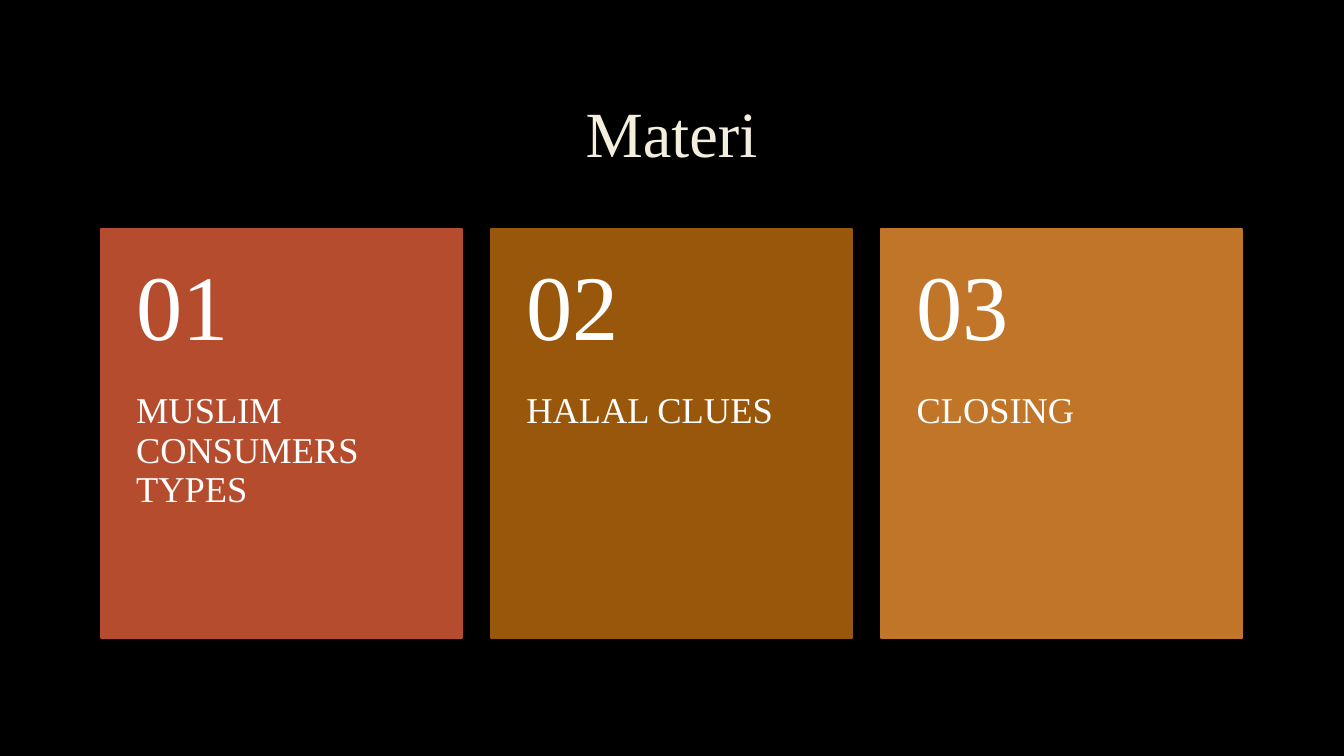
"""Build the agenda slide: a title above three numbered topic cards."""
from pptx import Presentation
from pptx.dml.color import RGBColor
from pptx.enum.shapes import MSO_SHAPE as Shape
from pptx.enum.text import MSO_ANCHOR as Anchor, PP_ALIGN as Align
from pptx.util import Inches, Pt

BLACK = RGBColor(0x00, 0x00, 0x00)
CREAM = RGBColor(0xF4, 0xEE, 0xDC)
WHITE = RGBColor(0xFF, 0xFF, 0xFF)
RUST = RGBColor(0xB5, 0x4C, 0x2D)
BROWN = RGBColor(0x99, 0x57, 0x0C)
OCHRE = RGBColor(0xC1, 0x75, 0x29)

TOPICS = [("MUSLIM CONSUMERS TYPES", RUST), ("HALAL CLUES", BROWN), ("CLOSING", OCHRE)]

MARGIN, COLUMN_STEP = Inches(1), Inches(3.87)
CARD_TOP, CARD_WIDTH, CARD_HEIGHT = Inches(2.27), Inches(3.58), Inches(4.06)
NUMBER_HEIGHT = int(CARD_HEIGHT * 0.4)


def write(frame, text, size, color, align, anchor):
    """Fill a text frame with one styled paragraph."""
    frame.text = text
    frame.word_wrap = True
    frame.vertical_anchor = anchor
    paragraph = frame.paragraphs[0]
    paragraph.alignment = align
    paragraph.line_spacing = 0.9
    paragraph.space_before = Pt(0)
    paragraph.font.name = "Times New Roman"
    paragraph.font.size = Pt(size)
    paragraph.font.color.rgb = color


def add_card_text(left, top, height, text, size, anchor, inset_top, inset_bottom):
    """Add a text box that spans the width of a card."""
    frame = slide.shapes.add_textbox(left, top, CARD_WIDTH, height).text_frame
    frame.margin_left = frame.margin_right = Inches(0.35)
    frame.margin_top, frame.margin_bottom = Inches(inset_top), Inches(inset_bottom)
    write(frame, text, size, WHITE, Align.LEFT, anchor)


deck = Presentation()
deck.slide_width, deck.slide_height = Inches(13.33), Inches(7.5)
slide = deck.slides.add_slide(deck.slide_layouts[5])
slide.background.fill.solid()
slide.background.fill.fore_color.rgb = BLACK

heading = slide.shapes.title
heading.left, heading.top = MARGIN, Inches(0.67)
heading.width, heading.height = Inches(11.32), Inches(1.38)
write(heading.text_frame, "Materi", 46, CREAM, Align.CENTER, Anchor.MIDDLE)

for column, (topic, color) in enumerate(TOPICS):
    left = MARGIN + column * COLUMN_STEP
    card = slide.shapes.add_shape(Shape.RECTANGLE, left, CARD_TOP, CARD_WIDTH, CARD_HEIGHT)
    card.shadow.inherit = False
    card.fill.solid()
    card.fill.fore_color.rgb = color
    card.line.color.rgb = color
    card.line.width = Pt(1.25)
    add_card_text(left, CARD_TOP + NUMBER_HEIGHT, CARD_HEIGHT - NUMBER_HEIGHT,
                  topic, 26, Anchor.TOP, 0, 0.36)
    add_card_text(left, CARD_TOP, NUMBER_HEIGHT,
                  f"{column + 1:02}", 66, Anchor.MIDDLE, 0.18, 0.18)

deck.save("out.pptx")
